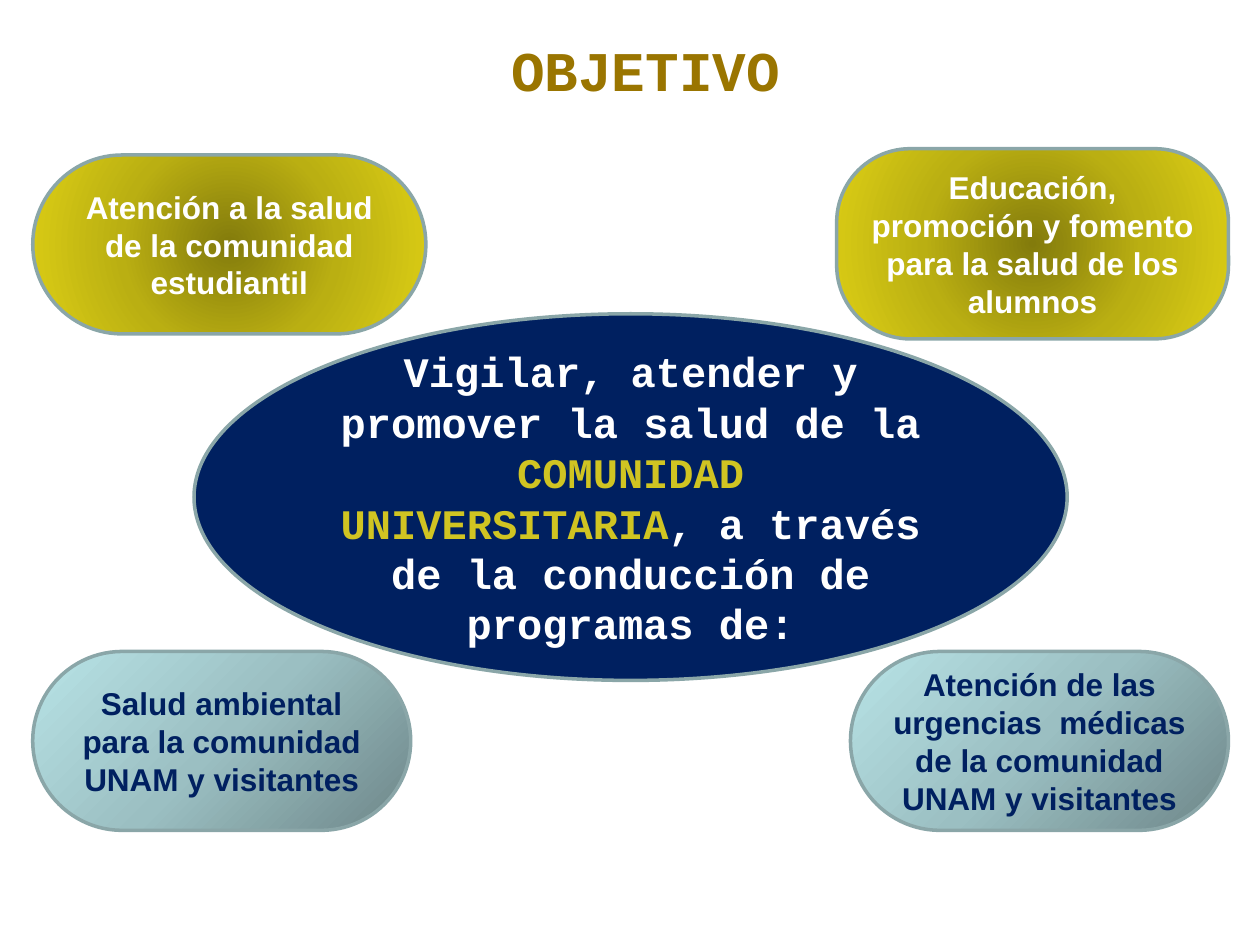
from dataclasses import dataclass

import pptx
import pptx.dml.color
import pptx.enum.shapes
import pptx.enum.text
import pptx.oxml
import pptx.oxml.ns
import pptx.util
from pptx.util import Inches

COLORS = {
    "title": "9A7500",
    "outline": "8AA6A8",
    "navy": "002060",
    "white": "FFFFFF",
    "highlight": "D0C422",
}
SHAPES = pptx.enum.shapes.MSO_SHAPE
CENTER = pptx.enum.text.PP_ALIGN.CENTER
MIDDLE = pptx.enum.text.MSO_ANCHOR.MIDDLE


@dataclass
class Gradient:
    colors: tuple[str, str, str]
    direction: str


@dataclass
class Program:
    text: str
    left: float
    top: float
    width: float
    height: float
    roundness: float
    gradient: Gradient
    text_color: str


GOLD = Gradient(
    ("837B0C", "BAAF12", "DDCF15"),
    '<a:path path="circle">'
    '<a:fillToRect l="50000" t="50000" r="50000" b="50000"/></a:path>',
)
TEAL = Gradient(("6D8688", "9BBFC2", "B8E3E6"), '<a:lin ang="13500000" scaled="0"/>')

UPPER_PROGRAMS = [
    Program("Atención a la salud de la comunidad estudiantil",
            0.26, 1.23, 3.12, 1.42, 0.5, GOLD, "white"),
    Program("Educación, promoción y fomento para la salud de los alumnos",
            6.64, 1.18, 3.11, 1.51, 0.387, GOLD, "white"),
]
LOWER_PROGRAMS = [
    Program("Atención de las urgencias  médicas de la comunidad UNAM y visitantes",
            6.75, 5.17, 3, 1.42, 0.5, TEAL, "navy"),
    Program("Salud ambiental para la comunidad UNAM y visitantes",
            0.26, 5.17, 3, 1.42, 0.5, TEAL, "navy"),
]
OBJECTIVE = [
    ("Vigilar, atender y promover la salud de la ", "white"),
    ("COMUNIDAD UNIVERSITARIA", "highlight"),
    (", a través de la conducción de programas de:", "white"),
]


def rgb(name: str) -> pptx.dml.color.RGBColor:
    return pptx.dml.color.RGBColor.from_string(COLORS[name])


def format_paragraph(para, font_name: str, size: int, color: str) -> None:
    para.alignment = CENTER
    para.font.name = font_name
    para.font.size = pptx.util.Pt(size)
    para.font.bold = True
    para.font.color.rgb = rgb(color)


def add_outlined_shape(page, kind, left: float, top: float, width: float, height: float):
    shape = page.shapes.add_shape(
        kind, Inches(left), Inches(top), Inches(width), Inches(height))
    shape.shadow.inherit = False
    shape.line.color.rgb = rgb("outline")
    shape.line.width = pptx.util.Pt(2)
    shape.text_frame.word_wrap = True
    shape.text_frame.vertical_anchor = MIDDLE
    return shape


def apply_gradient(shape, gradient: Gradient) -> None:
    stops = "".join(
        f'<a:gs pos="{position}"><a:srgbClr val="{color}"/></a:gs>'
        for position, color in zip((0, 50000, 100000), gradient.colors))
    fill = pptx.oxml.parse_xml(
        f'<a:gradFill {pptx.oxml.ns.nsdecls("a")} rotWithShape="1">'
        f"<a:gsLst>{stops}</a:gsLst>{gradient.direction}</a:gradFill>")
    geometry = shape.element.spPr.find(pptx.oxml.ns.qn("a:prstGeom"))
    geometry.addnext(fill)


def add_program(page, program: Program) -> None:
    box = add_outlined_shape(page, SHAPES.ROUNDED_RECTANGLE, program.left,
                             program.top, program.width, program.height)
    box.adjustments[0] = program.roundness
    apply_gradient(box, program.gradient)
    para = box.text_frame.paragraphs[0]
    para.text = program.text
    format_paragraph(para, "Arial", 18, program.text_color)


def add_objective(page) -> None:
    oval = add_outlined_shape(page, SHAPES.OVAL, 1.54, 2.49, 6.93, 2.91)
    oval.fill.solid()
    oval.fill.fore_color.rgb = rgb("navy")
    para = oval.text_frame.paragraphs[0]
    format_paragraph(para, "Courier New", 24, "white")
    for text, color in OBJECTIVE:
        span = para.add_run()
        span.text = text
        span.font.color.rgb = rgb(color)


def set_title(page) -> None:
    title = page.shapes.title
    title.left, title.top = Inches(0.91), Inches(0.23)
    title.width, title.height = Inches(8.43), Inches(0.64)
    title.text_frame.auto_size = pptx.enum.text.MSO_AUTO_SIZE.NONE
    title.text_frame.vertical_anchor = pptx.enum.text.MSO_ANCHOR.TOP
    para = title.text_frame.paragraphs[0]
    para.text = "OBJETIVO"
    format_paragraph(para, "Courier New", 32, "title")


def main() -> None:
    deck = pptx.Presentation()
    deck.slide_width, deck.slide_height = Inches(10), Inches(7.5)
    title_only = deck.slide_layouts[5]
    page = deck.slides.add_slide(title_only)
    set_title(page)
    for program in UPPER_PROGRAMS:
        add_program(page, program)
    add_objective(page)
    for program in LOWER_PROGRAMS:
        add_program(page, program)
    deck.save("out.pptx")


if __name__ == "__main__":
    main()
